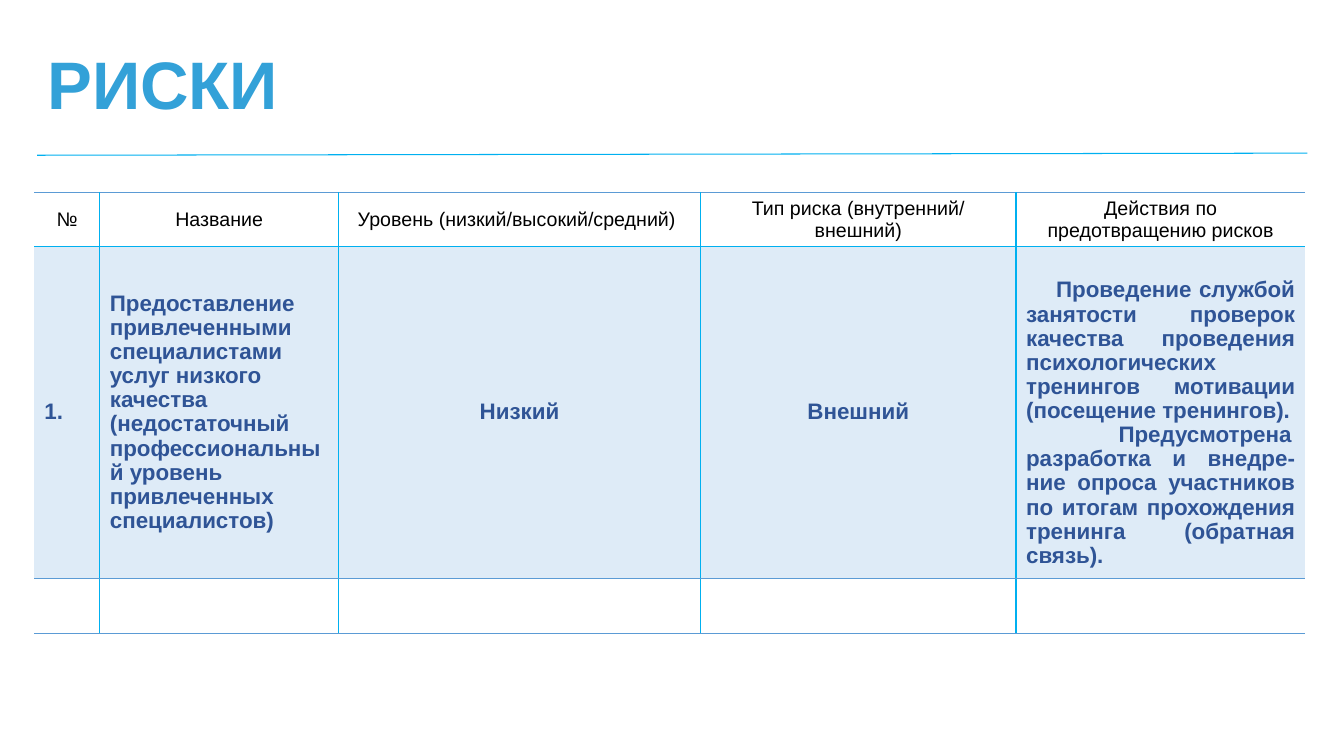
import pptx
import pptx.dml.color
import pptx.enum.shapes
import pptx.enum.text
import pptx.oxml
import pptx.oxml.ns
import pptx.util
from pptx.util import Pt

FONT = "Arial"
TITLE_BLUE, TEXT_BLUE, ROW_BLUE = "33A1D8", "2F5496", "DEEBF7"
CYAN, STEEL, BLACK, WHITE = "00B0F0", "5B9BD5", "000000", "FFFFFF"
COLUMNS = [46.8, 170.6, 258.5, 225.4, 206.6]
ROWS = [37.4, 237, 39.6]
ALIGN = pptx.enum.text.PP_ALIGN
ANCHOR = pptx.enum.text.MSO_ANCHOR

HEADINGS = [
    "№",
    "Название",
    "Уровень (низкий/высокий/средний) ",
    "Тип риска (внутренний/ внешний)",
    "Действия по предотвращению рисков",
]
RISK = [
    "1.",
    "Предоставление привлеченными специалистами услуг низкого качества "
    "(недостаточный профессиональный уровень привлеченных специалистов)",
    "Низкий",
    "Внешний",
]
RISK_ALIGN = [ALIGN.LEFT, ALIGN.LEFT, ALIGN.CENTER, ALIGN.CENTER]
# Each action with its first-line indent in points
ACTIONS = [
    ("Проведение службой занятости проверок качества проведения "
     "психологических тренингов мотивации (посещение тренингов).", 21.5),
    ("Предусмотрена разработка и внедре-ние опроса участников по итогам "
     "прохождения тренинга (обратная связь).", 66),
]


def rgb(value):
    return pptx.dml.color.RGBColor.from_string(value)


def add_text(para, text, size, color, bold=False, align=ALIGN.LEFT):
    para.alignment = align
    span = para.add_run()
    span.text = text
    span.font.name = FONT
    span.font.size = Pt(size)
    span.font.bold = bold
    span.font.color.rgb = rgb(color)


def add_title(page, text):
    title = page.shapes.title
    title.left, title.top, title.width, title.height = Pt(26.6), Pt(35.3), Pt(799), Pt(57)
    frame = title.text_frame
    frame.vertical_anchor = ANCHOR.BOTTOM
    frame.paragraphs[0].line_spacing = 0.9
    add_text(frame.paragraphs[0], text, 48, TITLE_BLUE, bold=True)


def add_rule(page, start, end):
    rule = page.shapes.add_connector(
        pptx.enum.shapes.MSO_CONNECTOR.STRAIGHT, *map(Pt, start + end))
    rule.line.color.rgb = rgb(CYAN)
    rule.line.width = Pt(0.75)
    rule._element.spPr.append(pptx.oxml.parse_xml(
        f'<a:effectLst {pptx.oxml.ns.nsdecls("a")}/>'))


def set_borders(cell, colors):
    """Draw the left, right, top and bottom edges; None leaves an edge open."""
    for side, color in zip("LRTB", colors):
        fill = (f'<a:solidFill><a:srgbClr val="{color}"/></a:solidFill>'
                if color else "<a:noFill/>")
        cell._tc.get_or_add_tcPr().append(pptx.oxml.parse_xml(
            f'<a:ln{side} {pptx.oxml.ns.nsdecls("a")} w="{Pt(1)}">{fill}</a:ln{side}>'))


def add_grid(page):
    frame = page.shapes.add_table(
        len(ROWS), len(COLUMNS), Pt(24.5), Pt(137.5), Pt(sum(COLUMNS)), Pt(sum(ROWS)))
    table = frame.table
    table.first_row = table.horz_banding = False
    for column, width in zip(table.columns, COLUMNS):
        column.width = Pt(width)
    row_edges = [STEEL, CYAN, STEEL, STEEL]
    column_edges = [None] + [CYAN] * (len(COLUMNS) - 1) + [None]
    for i, height in enumerate(ROWS):
        table.rows[i].height = Pt(height)
        for j in range(len(COLUMNS)):
            cell = table.cell(i, j)
            cell.vertical_anchor = ANCHOR.MIDDLE
            set_borders(cell, column_edges[j:j + 2] + row_edges[i:i + 2])
            cell.fill.solid()
            cell.fill.fore_color.rgb = rgb(ROW_BLUE if i == 1 else WHITE)
    return table


def fill_actions(cell):
    cell.margin_top = Pt(19)
    frame = cell.text_frame
    for i, (text, indent) in enumerate(ACTIONS):
        para = frame.add_paragraph() if i else frame.paragraphs[0]
        add_text(para, text, 16, TEXT_BLUE, True, ALIGN.JUSTIFY)
        para.line_spacing = 0.97
        para._p.get_or_add_pPr().set("indent", str(Pt(indent)))


def main():
    deck = pptx.Presentation()
    deck.slide_width, deck.slide_height = Pt(960), Pt(540)
    page = deck.slides.add_slide(deck.slide_layouts[5])
    add_title(page, "РИСКИ")
    add_rule(page, (26.6, 110.9), (933.8, 109.4))
    table = add_grid(page)
    for j, text in enumerate(HEADINGS):
        add_text(table.cell(0, j).text_frame.paragraphs[0], text, 14, BLACK,
                 align=ALIGN.CENTER)
    for j, (text, align) in enumerate(zip(RISK, RISK_ALIGN)):
        para = table.cell(1, j).text_frame.paragraphs[0]
        add_text(para, text, 16, TEXT_BLUE, True, align)
        para.line_spacing = 0.97
    fill_actions(table.cell(1, len(RISK)))
    deck.save("out.pptx")


if __name__ == "__main__":
    main()
